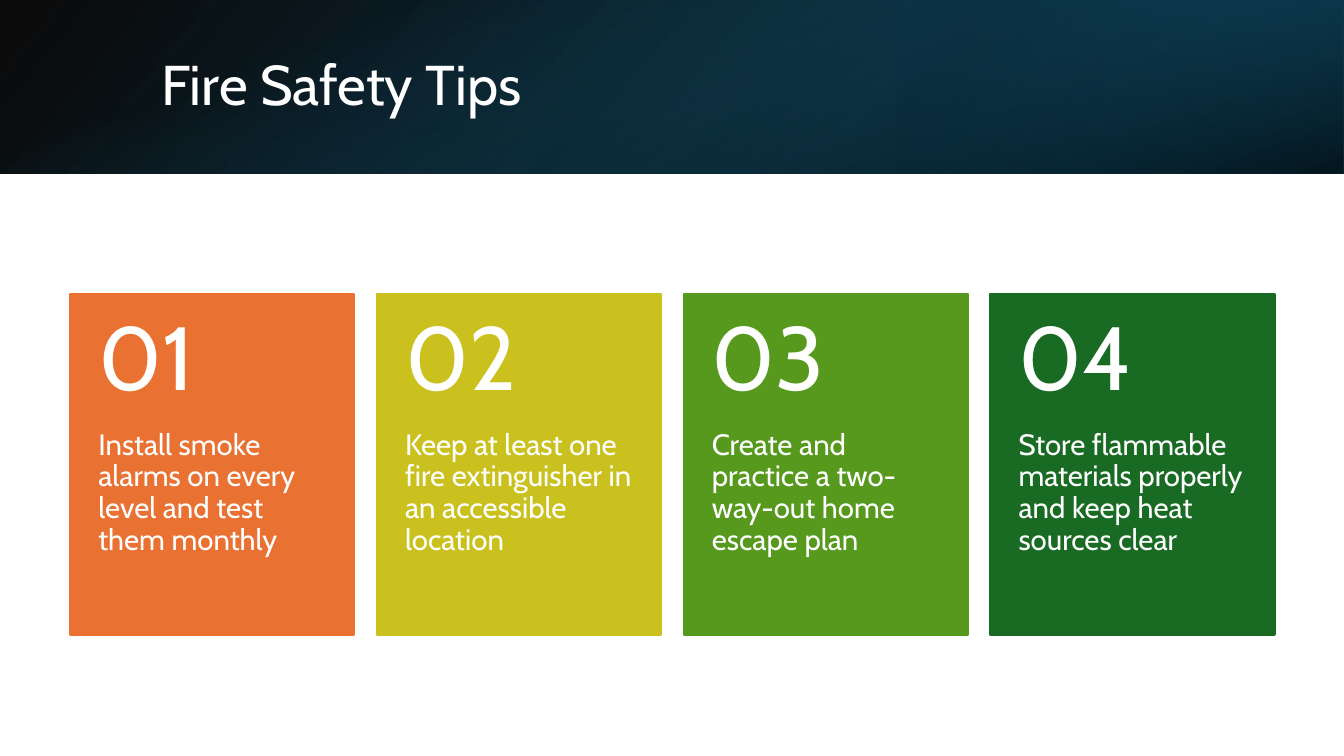
from lxml import etree
from pptx import Presentation
from pptx.dml.color import RGBColor
from pptx.enum.shapes import MSO_SHAPE
from pptx.enum.text import MSO_ANCHOR
from pptx.oxml.ns import qn
from pptx.util import Cm, Pt

RECT = MSO_SHAPE.RECTANGLE
TOP, MIDDLE = MSO_ANCHOR.TOP, MSO_ANCHOR.MIDDLE
SLIDE_W, SLIDE_H, BAND_H = 33.87, 19.05, 4.37


def rgb(value):
    return RGBColor.from_string(value)


def add_text(s, text, x, y, w, h, size=21, anchor=TOP, insets=(0.25, 0.13, 0.25, 0.13)):
    tf = s.shapes.add_textbox(Cm(x), Cm(y), Cm(w), Cm(h)).text_frame
    tf.word_wrap = True
    tf.vertical_anchor = anchor
    tf.margin_left, tf.margin_top, tf.margin_right, tf.margin_bottom = map(Cm, insets)
    p = tf.paragraphs[0]
    p.line_spacing = 0.9
    r = p.add_run()
    r.text = text
    r.font.name = "Cabin"
    r.font.size = Pt(size)
    r.font.color.rgb = rgb("FFFFFF")


prs = Presentation()
prs.slide_width, prs.slide_height = Cm(SLIDE_W), Cm(SLIDE_H)
s = prs.slides.add_slide(prs.slide_layouts[6])

# Header band: three layered gradients, stops as (position %, colour, opacity %)
turned_x = (SLIDE_W - BAND_H) / 2
layers = [
    ((0, 0, SLIDE_W, BAND_H), 0, True, 140,
     [(0, "000000", 96), (100, "104862", 100)]),
    ((SLIDE_W * 2 / 3, 0, SLIDE_W / 3, BAND_H), 180, True, 320,
     [(19, "0B3041", 68), (100, "156082", 79)]),
    ((turned_x, -turned_x, BAND_H, SLIDE_W), 90, False, 340,
     [(23, "156082", 0), (99, "000000", 74)]),
]
for box, rotation, flipped, angle, stops in layers:
    sp = s.shapes.add_shape(RECT, *map(Cm, box))
    sp.shadow.inherit = False
    sp.line.fill.background()
    sp.rotation = rotation
    if flipped:
        sp._element.spPr.xfrm.set("flipH", "1")
    sp.fill.gradient()
    sp.fill.gradient_angle = 360 - angle  # counter-clockwise
    for stop, (position, color, opacity) in zip(sp.fill.gradient_stops, stops):
        stop.position = position / 100
        stop.color.rgb = rgb(color)
    for clr, (_, _, opacity) in zip(sp._element.spPr.iter(qn("a:srgbClr")), stops):
        etree.SubElement(clr, qn("a:alpha")).set("val", str(opacity * 1000))

# Title
add_text(s, "Fire Safety Tips", 3.81, 0.97, 27.89, 2.44, size=40, anchor=MIDDLE)

# Numbered tip cards
CARD_X, CARD_Y, CARD_W, CARD_H, PITCH = 1.77, 7.4, 7.16, 8.59, 7.73
NUMBER_H = 3.43
tips = [
    ("E97132", "Install smoke alarms on every level and test them monthly"),
    ("CBC11E", "Keep at least one fire extinguisher in an accessible location"),
    ("56991D", "Create and practice a two-way-out home escape plan"),
    ("196B24", "Store flammable materials properly and keep heat sources clear"),
]
for i, (color, tip) in enumerate(tips):
    x = CARD_X + i * PITCH
    sp = s.shapes.add_shape(RECT, Cm(x), Cm(CARD_Y), Cm(CARD_W), Cm(CARD_H))
    sp.shadow.inherit = False
    sp.fill.solid()
    sp.fill.fore_color.rgb = rgb(color)
    sp.line.color.rgb = rgb(color)
    sp.line.width = Pt(1.5)
    add_text(s, tip, x, CARD_Y + NUMBER_H, CARD_W, CARD_H - NUMBER_H,
             insets=(0.71, 0, 0.71, 0.91))
    add_text(s, f"{i + 1:02}", x, CARD_Y, CARD_W, NUMBER_H, size=64,
             anchor=MIDDLE, insets=(0.71, 0.46, 0.71, 0.46))

prs.save("out.pptx")
